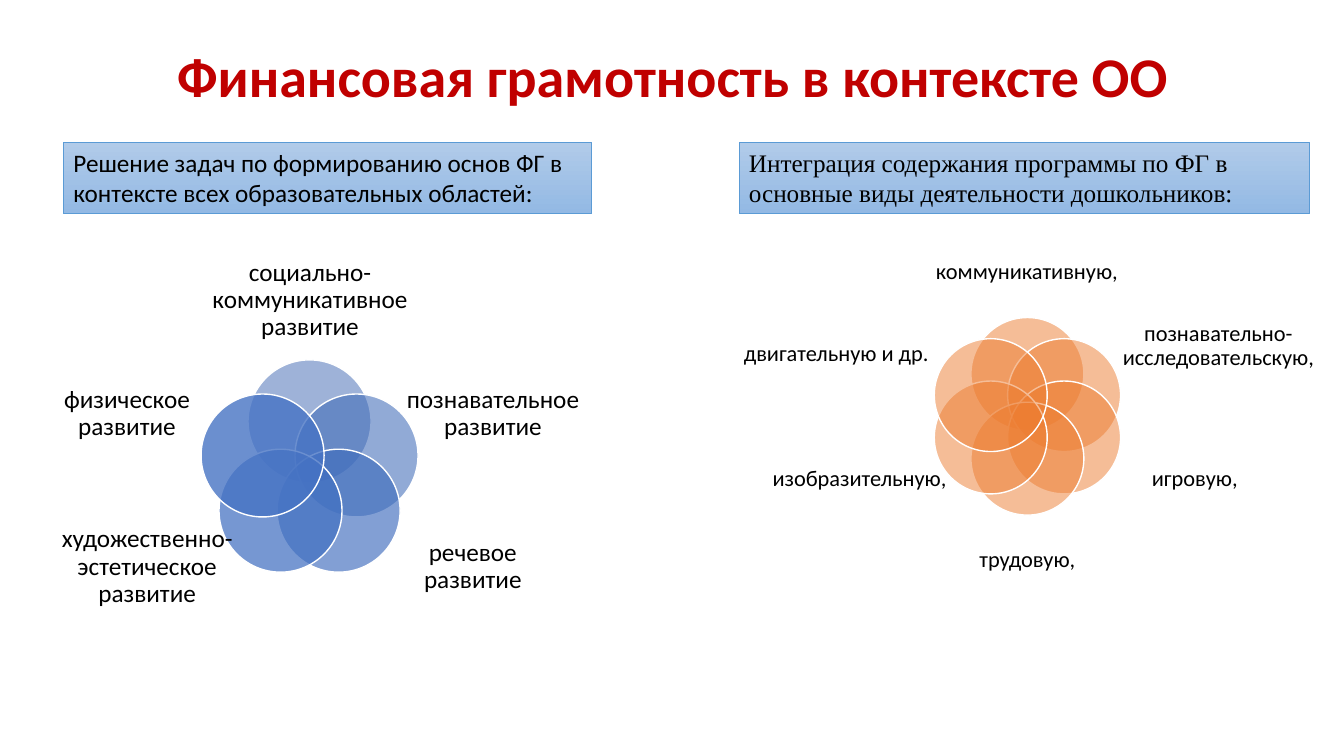
from math import cos, pi, sin

from lxml.etree import SubElement
from pptx import Presentation
from pptx.dml.color import RGBColor
from pptx.enum.shapes import MSO_SHAPE as Shape
from pptx.enum.text import MSO_ANCHOR as Anchor, MSO_AUTO_SIZE as AutoSize, PP_ALIGN as Align
from pptx.oxml.ns import qn
from pptx.util import Inches, Pt

TITLE = "Финансовая грамотность в контексте ОО"

AREAS = {
    "banner": "Решение задач по формированию основ ФГ в контексте всех образовательных областей:",
    "banner_font": "Calibri",
    "ring": (2.44, 3.26, 0.49, 1.22),
    "label_size": 18,
    "petals": [
        ("3E67B2", 50, "социально-коммуникативное развитие", (-0.98, -2.1, 1.97, 0.82)),
        ("3E6AB8", 57, "познавательное развитие", (0.94, -1.01, 1.76, 0.89)),
        ("3F6DBD", 65, "речевое развитие", (0.74, 0.51, 1.76, 0.89)),
        ("4270C1", 72, "художественно-эстетическое развитие", (-2.49, 0.51, 1.76, 0.89)),
        ("4673C4", 80, "физическое развитие", (-2.69, -1.01, 1.76, 0.89)),
    ],
}

ACTIVITIES = {
    "banner": "Интеграция содержания программы по ФГ в основные виды деятельности дошкольников:",
    "banner_font": "Times New Roman",
    "ring": (2.86, 2.72, 0.42, 1.12),
    "label_size": 16,
    "petals": [
        ("ED7D31", 50, "коммуникативную,", (-1.08, -1.81, 2.15, 0.76)),
        ("ED7D31", 50, "познавательно-исследовательскую,", (0.91, -1.11, 1.97, 0.83)),
        ("ED7D31", 50, "игровую,", (1.0, 0.16, 1.32, 0.93)),
        ("ED7D31", 50, "трудовую,", (-0.7, 1.05, 1.4, 0.76)),
        ("ED7D31", 50, "изобразительную,", (-2.61, 0.16, 1.89, 0.93)),
        ("ED7D31", 50, "двигательную и др.", (-2.86, -1.08, 1.93, 0.93)),
    ],
}


def color(hex_code):
    """Turn a hex string into a colour."""
    return RGBColor.from_string(hex_code)


def write(frame, text, size, font="Calibri", ink="000000", bold=False,
          align=Align.CENTER, anchor=Anchor.MIDDLE, spacing=0.9):
    """Put one formatted run into a text frame."""
    frame.word_wrap = True
    frame.vertical_anchor = anchor
    paragraph = frame.paragraphs[0]
    paragraph.alignment = align
    paragraph.line_spacing = spacing
    run = paragraph.add_run()
    run.text = text
    run.font.size = Pt(size)
    run.font.name = font
    run.font.bold = bold
    run.font.color.rgb = color(ink)


def add_title(slide, box):
    """Place the slide heading in its placeholder."""
    heading = slide.shapes.title
    heading.left, heading.top, heading.width, heading.height = map(Inches, box)
    heading.text_frame.auto_size = AutoSize.NONE
    write(heading.text_frame, TITLE, 40, ink="C00000", bold=True)


def add_banner(slide, box, text, font):
    """Draw the gradient strip that introduces a region."""
    banner = slide.shapes.add_shape(Shape.RECTANGLE, *map(Inches, box))
    banner.shadow.inherit = False
    banner.fill.gradient()
    banner.fill.gradient_angle = 270
    for stop, shade in zip(banner.fill.gradient_stops, ("B1CBE9", "93B9E4")):
        stop.color.rgb = color(shade)
    banner.line.color.rgb = color("5B9BD5")
    banner.line.width = Pt(0.5)
    write(banner.text_frame, text, 18, font, align=Align.LEFT, anchor=Anchor.TOP, spacing=1.0)


def add_petal(slide, box, shade, opacity):
    """Draw one translucent circle with a white outline."""
    petal = slide.shapes.add_shape(Shape.OVAL, *map(Inches, box))
    petal.shadow.inherit = False
    petal.fill.solid()
    petal.fill.fore_color.rgb = color(shade)
    fill_color = petal.element.spPr.find(qn("a:solidFill")).find(qn("a:srgbClr"))
    SubElement(fill_color, qn("a:alpha")).set("val", str(opacity * 1000))
    petal.line.color.rgb = color("FFFFFF")
    petal.line.width = Pt(1)


def add_label(slide, box, text, size):
    """Write the caption of a petal."""
    frame = slide.shapes.add_textbox(*map(Inches, box)).text_frame
    frame.margin_left = frame.margin_top = frame.margin_right = frame.margin_bottom = 0
    write(frame, text, size)


def add_region(slide, box, content):
    """Place a banner and a ring of labelled petals inside the box."""
    left, top, width, banner_height = box
    add_banner(slide, box, content["banner"], content["banner_font"])
    ring_x, ring_y, radius, diameter = content["ring"]
    center_x, center_y = left + ring_x, top + ring_y
    petals = content["petals"]
    for index, (shade, opacity, caption, (dx, dy, label_w, label_h)) in enumerate(petals):
        angle = 2 * pi * index / len(petals)
        petal_x = center_x + radius * sin(angle) - diameter / 2
        petal_y = center_y - radius * cos(angle) - diameter / 2
        add_petal(slide, (petal_x, petal_y, diameter, diameter), shade, opacity)
        add_label(slide, (center_x + dx, center_y + dy, label_w, label_h),
                  caption, content["label_size"])


def main():
    """Build and save the slide."""
    deck = Presentation()
    deck.slide_width, deck.slide_height = Inches(13.33), Inches(7.5)
    slide = deck.slides.add_slide(deck.slide_layouts[5])
    add_title(slide, (1.17, 0.4, 11, 0.77))
    add_region(slide, (0.63, 1.41, 5.24, 0.71), AREAS)
    add_region(slide, (7.33, 1.41, 5.66, 0.71), ACTIVITIES)
    deck.save("out.pptx")


if __name__ == "__main__":
    main()
